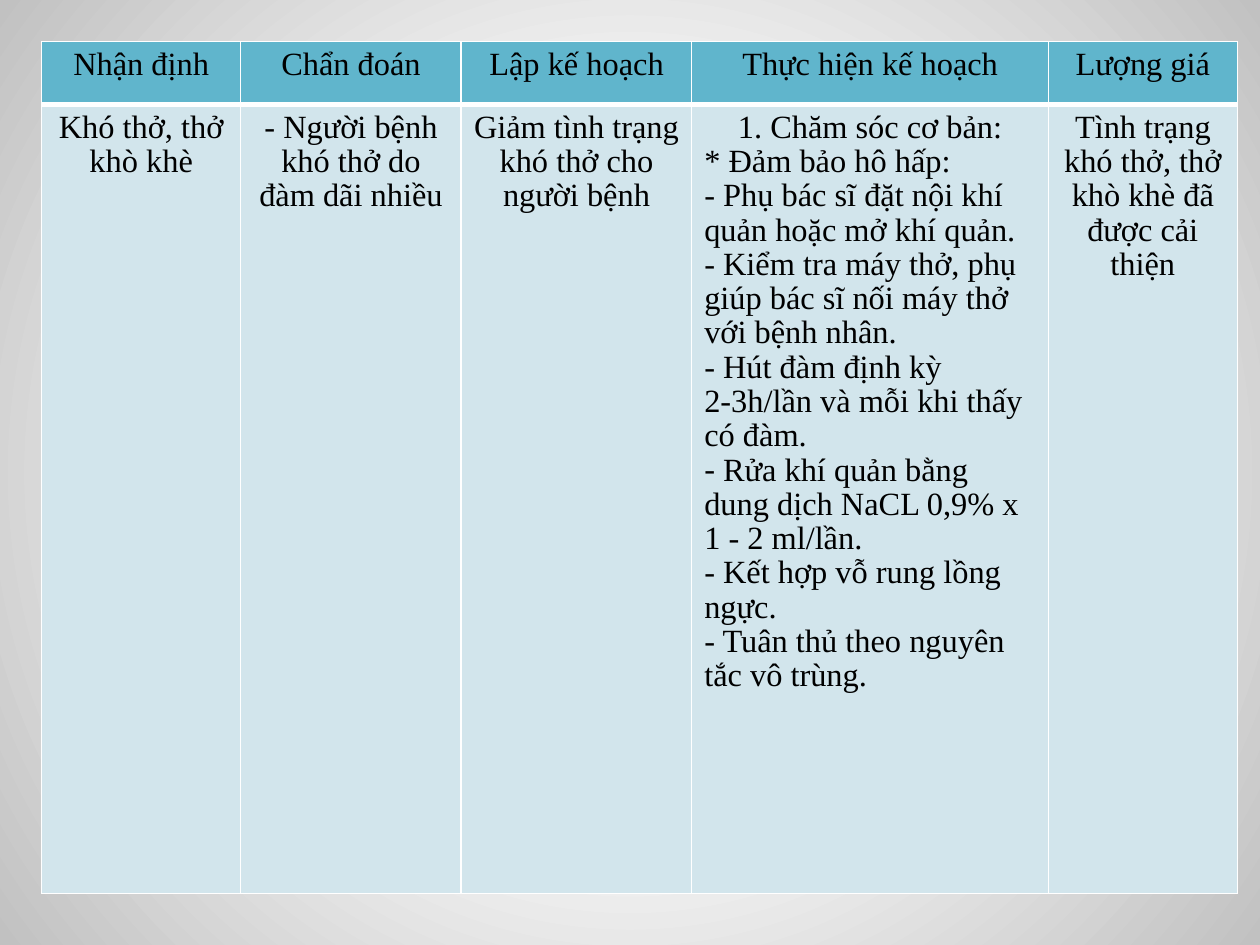
from lxml.etree import SubElement
from pptx import Presentation
from pptx.dml.color import RGBColor
from pptx.enum.text import PP_ALIGN as Align
from pptx.oxml.ns import qn
from pptx.util import Inches, Pt

WHITE = RGBColor(0xFF, 0xFF, 0xFF)
BLACK = RGBColor(0x00, 0x00, 0x00)
EDGE_GREY = RGBColor(0xC1, 0xC1, 0xC1)
HEADER_BLUE = RGBColor(0x60, 0xB5, 0xCC)
BODY_BLUE = RGBColor(0xD2, 0xE5, 0xEC)
FONT = "Times New Roman"

COLUMN_WIDTHS = [1.58, 1.75, 1.83, 2.83, 1.5]
ROW_HEIGHTS = [0.5, 6.26]
HEADINGS = ["Nhận định", "Chẩn đoán", "Lập kế hoạch", "Thực hiện kế hoạch", "Lượng giá"]
CARE_STEPS = [
    "1. Chăm sóc cơ bản:",
    "* Đảm bảo hô hấp:",
    "- Phụ bác sĩ đặt nội khí quản hoặc mở khí quản.",
    "- Kiểm tra máy thở, phụ giúp bác sĩ nối máy thở với bệnh nhân.",
    " Hút đàm định kỳ 2-3h/lần và mỗi khi thấy có đàm.",
    " Rửa khí quản bằng dung dịch NaCL 0,9% x 1 - 2 ml/lần.",
    " Kết hợp vỗ rung lồng ngực.",
    " Tuân thủ theo nguyên tắc vô trùng.",
]
FIRST_BULLETED_STEP = 4
CARE_PLAN = [
    ["Khó thở, thở khò khè"],
    ["- Người bệnh khó thở do đàm dãi nhiều"],
    ["Giảm tình trạng khó thở cho người bệnh"],
    CARE_STEPS,
    ["Tình trạng khó thở, thở khò khè đã được cải thiện"],
]


def set_radial_background(slide):
    fill = slide.background.fill
    fill.gradient()
    for stop, color, position in zip(fill.gradient_stops, (WHITE, EDGE_GREY), (0.35, 1)):
        stop.color.rgb = color
        stop.position = position
    linear = next(slide.element.iter(qn("a:lin")))
    gradient = linear.getparent()
    gradient.remove(linear)
    radial = SubElement(gradient, qn("a:path"), path="circle")
    SubElement(radial, qn("a:fillToRect"), l="50000", t="50000", r="50000", b="50000")


def set_borders(cell, top, bottom):
    """Draw white borders; top and bottom are widths in points."""
    properties = cell._tc.get_or_add_tcPr()
    for side, width in (("L", 1), ("R", 1), ("T", top), ("B", bottom)):
        line = SubElement(properties, qn(f"a:ln{side}"), w=str(Pt(width)))
        solid = SubElement(line, qn("a:solidFill"))
        SubElement(solid, qn("a:srgbClr"), val=str(WHITE))


def add_dash_bullet(paragraph):
    properties = paragraph._p.get_or_add_pPr()
    properties.set("marL", "0")
    properties.set("indent", "0")
    SubElement(properties, qn("a:buFont"), typeface=FONT)
    SubElement(properties, qn("a:buChar"), char="-")


def fill_cell(cell, lines, color, top, bottom):
    """Write the lines, the first one centred, and style the cell."""
    set_borders(cell, top, bottom)
    cell.fill.solid()
    cell.fill.fore_color.rgb = color
    cell.text = "\n".join(lines)
    for index, paragraph in enumerate(cell.text_frame.paragraphs):
        paragraph.alignment = Align.LEFT if index else Align.CENTER
        paragraph.line_spacing = 0.96
        if index >= FIRST_BULLETED_STEP:
            add_dash_bullet(paragraph)
        paragraph.font.name = FONT
        paragraph.font.size = Pt(18.5)
        paragraph.font.bold = False
        paragraph.font.color.rgb = BLACK


def add_care_table(slide):
    table = slide.shapes.add_table(
        len(ROW_HEIGHTS), len(COLUMN_WIDTHS), Inches(0.33), Inches(0.33),
        Inches(sum(COLUMN_WIDTHS)), Inches(sum(ROW_HEIGHTS))).table
    for row, height in zip(table.rows, ROW_HEIGHTS):
        row.height = Inches(height)
    for index, width in enumerate(COLUMN_WIDTHS):
        table.columns[index].width = Inches(width)
        fill_cell(table.cell(0, index), [HEADINGS[index]], HEADER_BLUE, top=1, bottom=3)
        fill_cell(table.cell(1, index), CARE_PLAN[index], BODY_BLUE, top=3, bottom=1)


def main():
    presentation = Presentation()
    presentation.slide_width = Inches(10)
    presentation.slide_height = Inches(7.5)
    slide = presentation.slides.add_slide(presentation.slide_layouts[6])
    set_radial_background(slide)
    add_care_table(slide)
    presentation.save("out.pptx")


if __name__ == "__main__":
    main()
